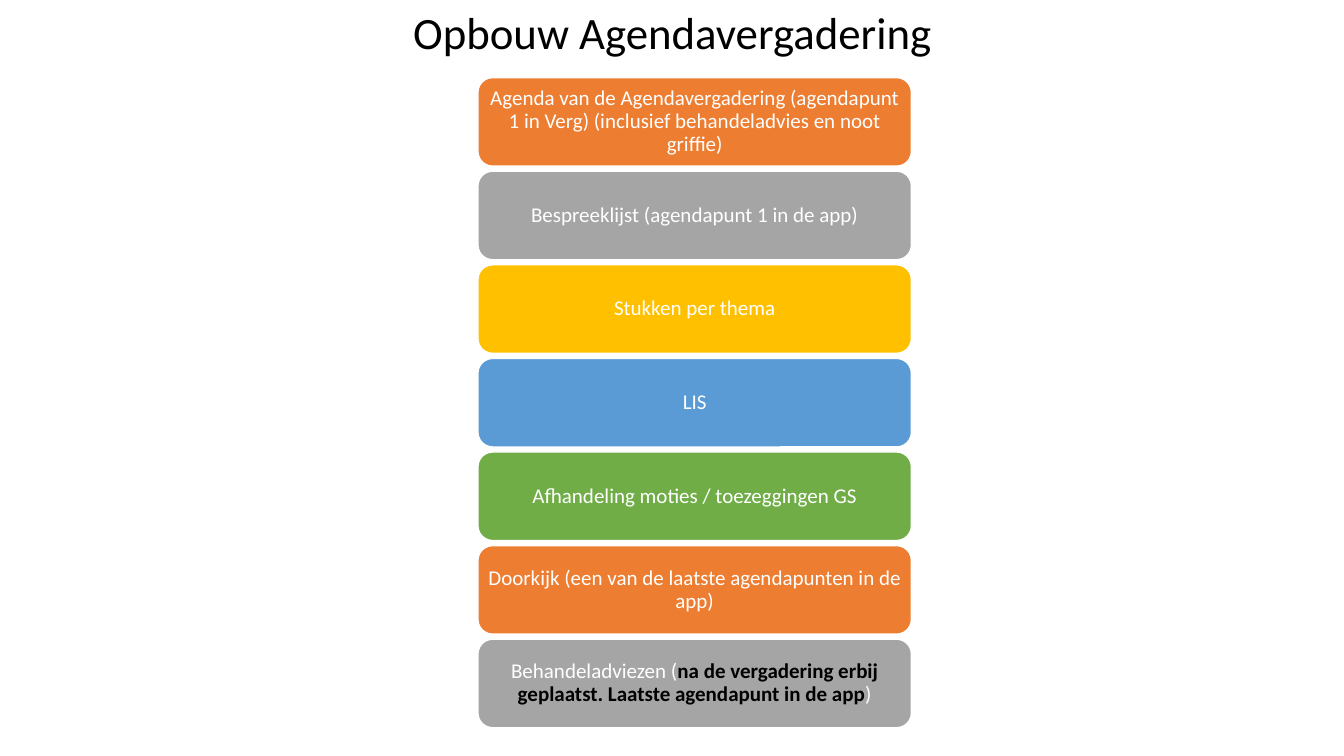
from pptx import Presentation
from pptx import util as u
from pptx.dml.color import RGBColor
from pptx.enum import shapes, text

WHITE, BLACK = "FFFFFF", "000000"
FILLS = ["ED7D31", "A5A5A5", "FFC000", "5B9BD5", "70AD47"]
STEPS = [
    ["Agenda van de Agendavergadering (agendapunt 1 in Verg) "
     "(inclusief behandeladvies en noot griffie)"],
    ["Bespreeklijst (agendapunt 1 in de app)"],
    ["Stukken per thema"],
    ["LIS"],
    ["Afhandeling moties / toezeggingen GS"],
    ["Doorkijk (een van de laatste agendapunten in de app)"],
    ["Behandeladviezen (",
     "na de vergadering erbij geplaatst. Laatste agendapunt in de app", ")"],
]


def paint(target, tone):
    """Give a fill or font colour the hex tone."""
    target.rgb = RGBColor.from_string(tone)


def style(para, size, tone):
    """Centre a paragraph and set its font."""
    para.alignment = text.PP_ALIGN.CENTER
    para.line_spacing = 0.9
    para.font.name = "Calibri"
    para.font.size = u.Pt(size)
    paint(para.font.color, tone)


def add_title(slide, words, left, top, width, height):
    """Place the slide title in the given box."""
    title = slide.shapes.title
    title.left, title.top = u.Inches(left), u.Inches(top)
    title.width, title.height = u.Inches(width), u.Inches(height)
    frame = title.text_frame
    frame.text = words
    frame.vertical_anchor = text.MSO_ANCHOR.MIDDLE
    style(frame.paragraphs[0], 32, BLACK)


def add_step(slide, parts, tone, left, top, width, height):
    """Draw one step; every second part of its text is bold black."""
    box = slide.shapes.add_shape(
        shapes.MSO_SHAPE.ROUNDED_RECTANGLE,
        u.Inches(left), u.Inches(top), u.Inches(width), u.Inches(height))
    box.shadow.inherit = False
    box.fill.solid()
    paint(box.fill.fore_color, tone)
    paint(box.line.color, WHITE)
    box.line.width = u.Pt(1)
    frame = box.text_frame
    frame.word_wrap = True
    frame.vertical_anchor = text.MSO_ANCHOR.MIDDLE
    frame.margin_left = frame.margin_right = u.Inches(0.06)
    frame.margin_top = frame.margin_bottom = u.Inches(0.03)
    para = frame.paragraphs[0]
    style(para, 15, WHITE)
    for i, part in enumerate(parts):
        run = para.add_run()
        run.text = part
        strong = i % 2 == 1
        run.font.bold = strong
        paint(run.font.color, BLACK if strong else WHITE)


def add_stack(slide, left, top, width, height, gap=0.05):
    """Stack the steps evenly in the given box."""
    pitch = (height + gap) / len(STEPS)
    for i, parts in enumerate(STEPS):
        add_step(slide, parts, FILLS[i % len(FILLS)],
                 left, top + i * pitch, width, pitch - gap)


def main():
    """Build and save the slide."""
    deck = Presentation()
    deck.slide_width, deck.slide_height = u.Inches(13.33), u.Inches(7.5)
    slide = deck.slides.add_slide(deck.slide_layouts[5])
    add_title(slide, "Opbouw Agendavergadering", 0.92, 0.03, 11.5, 0.64)
    add_stack(slide, 4.74, 0.77, 4.3, 6.45)
    deck.save("out.pptx")


if __name__ == "__main__":
    main()
